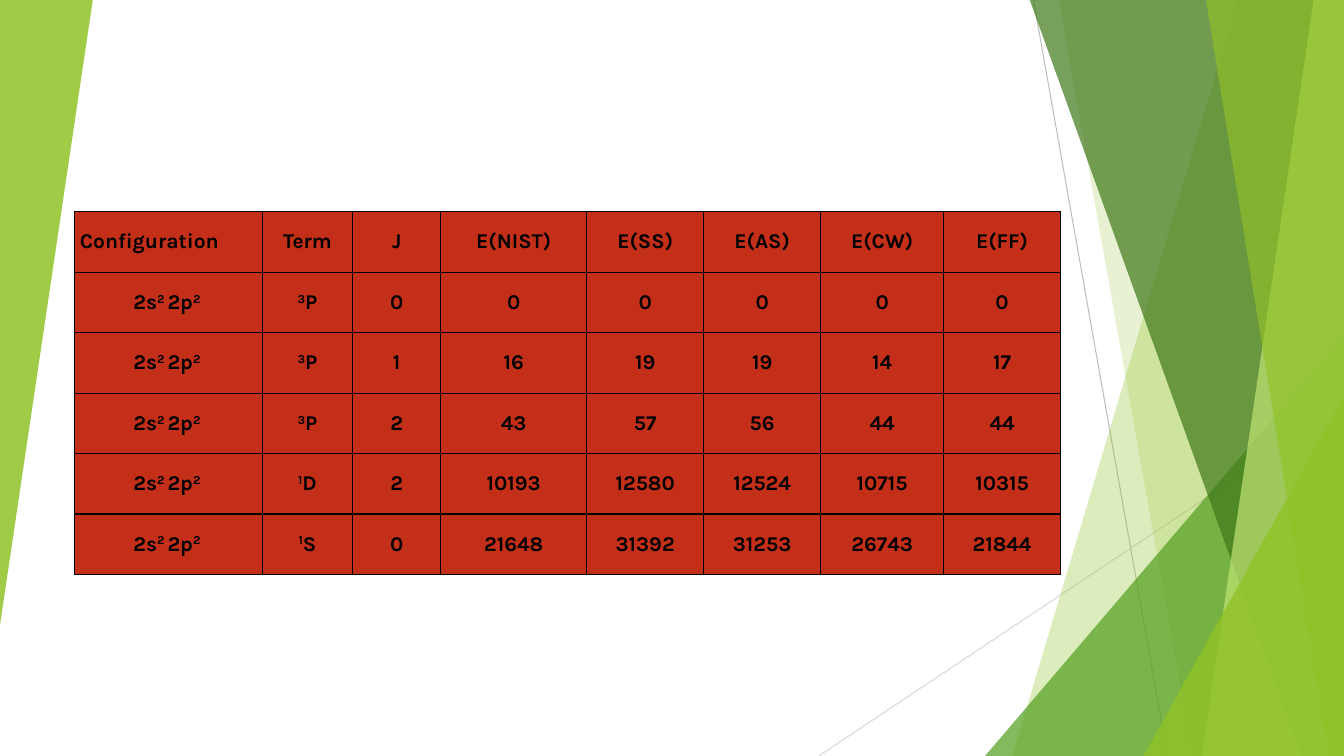
from lxml.etree import SubElement
from pptx import Presentation
from pptx.dml.color import RGBColor
from pptx.enum.shapes import MSO_CONNECTOR, MSO_SHAPE
from pptx.enum.text import MSO_ANCHOR, PP_ALIGN
from pptx.oxml import parse_xml
from pptx.oxml.ns import nsdecls, qn
from pptx.util import Pt

PX = 9144  # EMU in one px, 100 px to the inch
WIDTH, HEIGHT = 1333, 750
THEME = {
    "lime": "90C226", "green": "54A021", "forest": "3F7819", "pale": "C0E474",
    "mid_gray": "BFBFBF", "light_gray": "D9D9D9",
    "cell": "C42F1A", "ink": "000000",
    "font": "Karla", "size": 15, "hairline": 0.75, "border": 1,
}


def color(name):
    return RGBColor.from_string(THEME[name])


def paint(shape, fill_name, opacity):
    """Give a shape a translucent fill without line or shadow."""
    shape.shadow.inherit = False
    shape.line.fill.background()
    shape.fill.solid()
    shape.fill.fore_color.rgb = color(fill_name)
    tint = shape._element.spPr.find(qn("a:solidFill"))[0]
    SubElement(tint, qn("a:alpha"), val=str(opacity * 1000))


deck = Presentation()
deck.slide_width, deck.slide_height = WIDTH * PX, HEIGHT * PX
page = deck.slides.add_slide(deck.slide_layouts[6])
shapes = page.shapes

# Thin lines behind the facets
for x1, y1, x2, y2, line_color in [
    (1025, 0, 1158, HEIGHT, "mid_gray"),
    (WIDTH, 403, 812, HEIGHT, "light_gray"),
]:
    ends = [value * PX for value in (x1, y1, x2, y2)]
    line = shapes.add_connector(MSO_CONNECTOR.STRAIGHT, *ends)
    line.line.color.rgb = color(line_color)
    line.line.width = Pt(THEME["hairline"])
    SubElement(line._element.spPr, qn("a:effectLst"))

# Facets, back to front: a blade runs to the right edge from its top and
# bottom x; a triangle has left, top, width, height and rotation
facets = [
    ("blade", (1228, 1004), "lime", 30),
    ("blade", (1050, 1183), "lime", 20),
    ("triangle", (977, 333, 356, 417, 0), "green", 72),
    ("blade", (1021, 1291), "forest", 70),
    ("blade", (1303, 1192), "pale", 70),
    ("blade", (1196, 1318), "lime", 65),
    ("triangle", (1134, 393, 199, 357, 0), "lime", 80),
    ("triangle", (0, 0, 92, 620, 180), "lime", 85),
]
for kind, place, fill_name, opacity in facets:
    if kind == "blade":
        top_x, bottom_x = place
        outline = shapes.build_freeform(top_x, -1, scale=PX)
        outline.add_line_segments(
            [(WIDTH, -1), (WIDTH, HEIGHT), (bottom_x, HEIGHT)], close=True)
        facet = outline.convert_to_shape()
    else:
        *frame, rotation = place
        facet = shapes.add_shape(
            MSO_SHAPE.ISOSCELES_TRIANGLE, *[value * PX for value in frame])
        facet.adjustments[0] = 1
        facet.rotation = rotation
    paint(facet, fill_name, opacity)

# Energy levels; ^ switches superscript on and off
levels = [
    ("3", "P", 0, (0, 0, 0, 0, 0)),
    ("3", "P", 1, (16, 19, 19, 14, 17)),
    ("3", "P", 2, (43, 57, 56, 44, 44)),
    ("1", "D", 2, (10193, 12580, 12524, 10715, 10315)),
    ("1", "S", 0, (21648, 31392, 31253, 26743, 21844)),
]
rows = [[" Configuration", " Term ", " J ",
         "E(NIST)", "E(SS)", "E(AS)", "E(CW)", "E(FF)"]]
for spin, letter, momentum, energies in levels:
    rows.append(["2s^2 ^2p^2 ^", f" ^{spin}^{letter} ", f" {momentum} ",
                 *map(str, energies)])

# Table grid
column_widths = [186, 90, 87, 145, 116, 116, 122, 116]
row_height = 60
table = shapes.add_table(
    len(rows), len(column_widths), 74 * PX, 210 * PX,
    sum(column_widths) * PX, len(rows) * row_height * PX).table
table.first_row = table.horz_banding = False
for column, width in zip(table.columns, column_widths):
    column.width = width * PX

cell_format = {
    "margin_left": 0, "margin_right": 0, "margin_top": 0, "margin_bottom": 0,
    "vertical_anchor": MSO_ANCHOR.MIDDLE,
}
font_format = {"name": THEME["font"], "size": Pt(THEME["size"]), "bold": True}

# Table cells
for row_index, row in enumerate(rows):
    table.rows[row_index].height = row_height * PX
    for column_index, text in enumerate(row):
        cell = table.cell(row_index, column_index)
        for name, value in cell_format.items():
            setattr(cell, name, value)
        cell.fill.solid()
        cell.fill.fore_color.rgb = color("cell")
        for position, side in enumerate("LRTB"):
            border = parse_xml(
                f'<a:ln{side} {nsdecls("a")} w="{Pt(THEME["border"])}">'
                f'<a:solidFill><a:srgbClr val="{THEME["ink"]}"/></a:solidFill>'
                f'</a:ln{side}>')
            cell._tc.tcPr.insert(position, border)
        para = cell.text_frame.paragraphs[0]
        is_corner = row_index == column_index == 0
        para.alignment = PP_ALIGN.LEFT if is_corner else PP_ALIGN.CENTER
        for part_index, part in enumerate(text.split("^")):
            if not part:
                continue
            span = para.add_run()
            span.text = part
            for name, value in font_format.items():
                setattr(span.font, name, value)
            span.font.color.rgb = color("ink")
            if part_index % 2:
                span._r.get_or_add_rPr().set("baseline", "30000")

deck.save("out.pptx")
